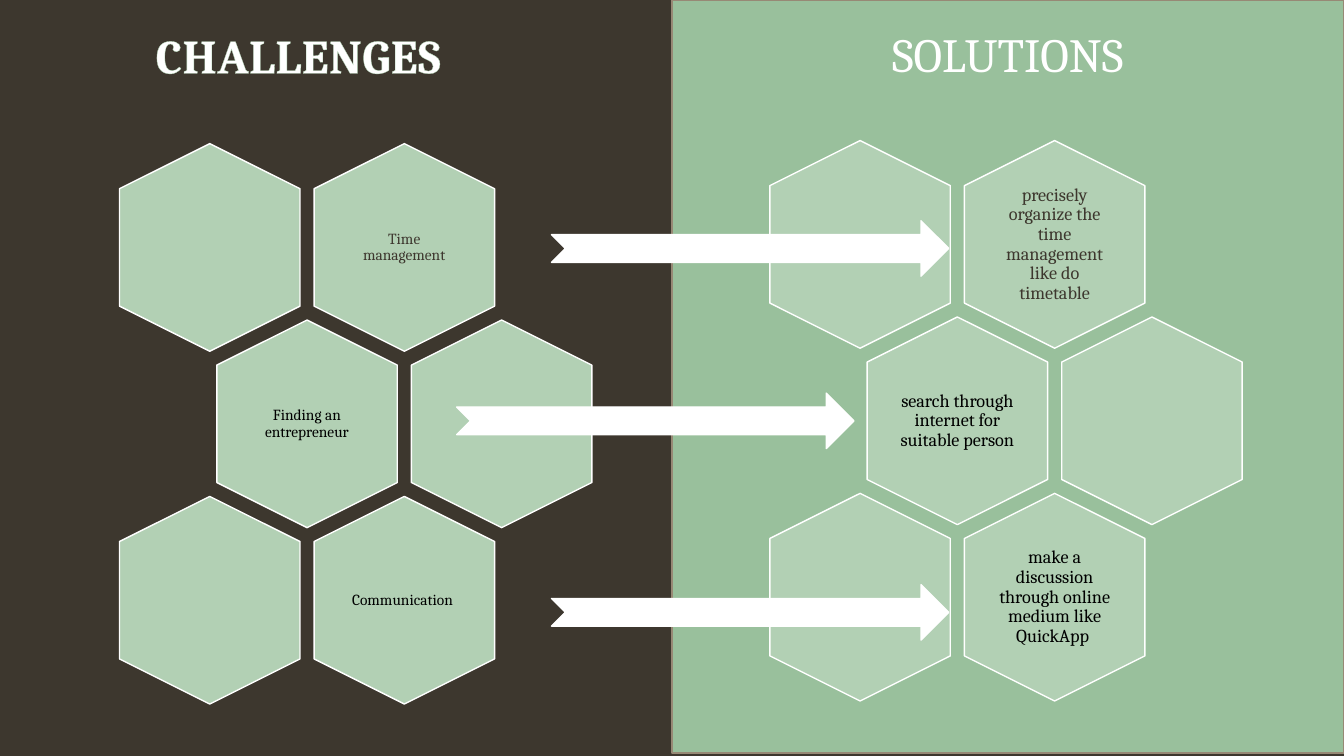
from lxml.etree import SubElement
from pptx import Presentation
from pptx.dml.color import RGBColor
from pptx.enum.shapes import MSO_SHAPE
from pptx.enum.text import MSO_ANCHOR, PP_ALIGN
from pptx.oxml.ns import qn
from pptx.util import Inches, Pt

BROWN = RGBColor(0x3D, 0x37, 0x2E)
GREEN = RGBColor(0x99, 0xC0, 0x9C)
PALE_GREEN = RGBColor(0xB2, 0xD0, 0xB4)
TAUPE = RGBColor(0x97, 0x89, 0x75)
WHITE = RGBColor(0xFF, 0xFF, 0xFF)
BLACK = RGBColor(0, 0, 0)

SLIDE_W, SLIDE_H = 13.33, 7.5
HALF_W = SLIDE_W / 2
HEX_W, HEX_H = 2.06, 1.79
LABEL_W, LABEL_H = 1.23, 1.42
COLUMN_STEP, ROW_STEP = 1.93, 1.75
ARROW_W, ARROW_H = 3.94, 0.55
LABEL_INSET = 0.05

HEADINGS = {
    "challenges": ("CHALLENGES", (0.95, 0, 4.02, 0.88), MSO_ANCHOR.BOTTOM, {"bold": True}),
    "solutions": ("SOLUTIONS", (7.83, 0.2, 4.33, 0.67), MSO_ANCHOR.TOP, {}),
}
HONEYCOMBS = [
    ((1.05, 1.56), 11, ["Time management", "Finding an entrepreneur", "Communication "]),
    ((7.5, 1.53), 13, [
        "precisely organize the time management like do timetable",
        "search through internet for suitable person",
        "make a discussion through online medium like QuickApp ",
    ]),
]
LABEL_COLUMNS = [1, 0, 1]
LABEL_COLORS = [BROWN, BLACK, BLACK]
ARROWS = [(5.47, 2.19), (4.53, 3.9), (5.47, 5.8)]


def inches(*lengths):
    return [Inches(length) for length in lengths]


def add_block(shapes, preset, box, fill, outline):
    block = shapes.add_shape(preset, *inches(*box))
    block.shadow.inherit = False
    block.fill.solid()
    block.fill.fore_color.rgb = fill
    block.line.color.rgb = outline
    block.line.width = Pt(1)
    return block


def add_words(shapes, words, box, size, color, frame_format, spacing=None, font_format=None):
    frame = shapes.add_textbox(*inches(*box)).text_frame
    for name, value in {"word_wrap": True, **frame_format}.items():
        setattr(frame, name, value)
    paragraph = frame.paragraphs[0]
    paragraph.alignment = PP_ALIGN.CENTER
    paragraph.line_spacing = spacing
    run = paragraph.add_run()
    run.text = words
    for name, value in {"name": "Cambria", "size": Pt(size), **(font_format or {})}.items():
        setattr(run.font, name, value)
    run.font.color.rgb = color
    return run


def add_heading(shapes, key, spacing=None):
    words, box, anchor, font_format = HEADINGS[key]
    return add_words(shapes, words, box, 34, WHITE, {"vertical_anchor": anchor}, spacing, font_format)


def outline_letters(run, color, width):
    properties = run.font._element
    properties.set("spc", "50")
    outline = SubElement(properties, qn("a:ln"), w=str(Pt(width)))
    fill = SubElement(outline, qn("a:solidFill"))
    SubElement(fill, qn("a:srgbClr"), val=str(color))
    properties.insert(0, outline)


def add_honeycomb(slide, origin, size, labels):
    cells = slide.shapes.add_group_shape().shapes
    insets = {f"margin_{side}": Inches(LABEL_INSET) for side in ("left", "right", "top", "bottom")}
    for row, label in enumerate(labels):
        for column in range(2):
            left = origin[0] + (column + row % 2 / 2) * COLUMN_STEP
            top = origin[1] + row * ROW_STEP
            hexagon = add_block(cells, MSO_SHAPE.HEXAGON, (left, top, HEX_W, HEX_H), PALE_GREEN, WHITE)
            hexagon.rotation = 90
            hexagon.adjustments[0] = 0.25
            if column == LABEL_COLUMNS[row]:
                box = (left + (HEX_W - LABEL_W) / 2, top + (HEX_H - LABEL_H) / 2, LABEL_W, LABEL_H)
                add_words(cells, label, box, size, LABEL_COLORS[row],
                          {"vertical_anchor": MSO_ANCHOR.MIDDLE, **insets}, 0.9)


def main():
    deck = Presentation()
    deck.slide_width, deck.slide_height = inches(SLIDE_W, SLIDE_H)
    slide = deck.slides.add_slide(deck.slide_layouts[6])
    slide.background.fill.solid()
    slide.background.fill.fore_color.rgb = BROWN

    outline_letters(add_heading(slide.shapes, "challenges", 0.9), PALE_GREEN, 0.75)
    add_block(slide.shapes, MSO_SHAPE.RECTANGLE, (HALF_W, 0, HALF_W, 7.47), GREEN, TAUPE)
    add_heading(slide.shapes, "solutions")
    for origin, size, labels in HONEYCOMBS:
        add_honeycomb(slide, origin, size, labels)
    for corner in ARROWS:
        add_block(slide.shapes, MSO_SHAPE.NOTCHED_RIGHT_ARROW, (*corner, ARROW_W, ARROW_H), WHITE, WHITE)
    deck.save("out.pptx")


if __name__ == "__main__":
    main()
